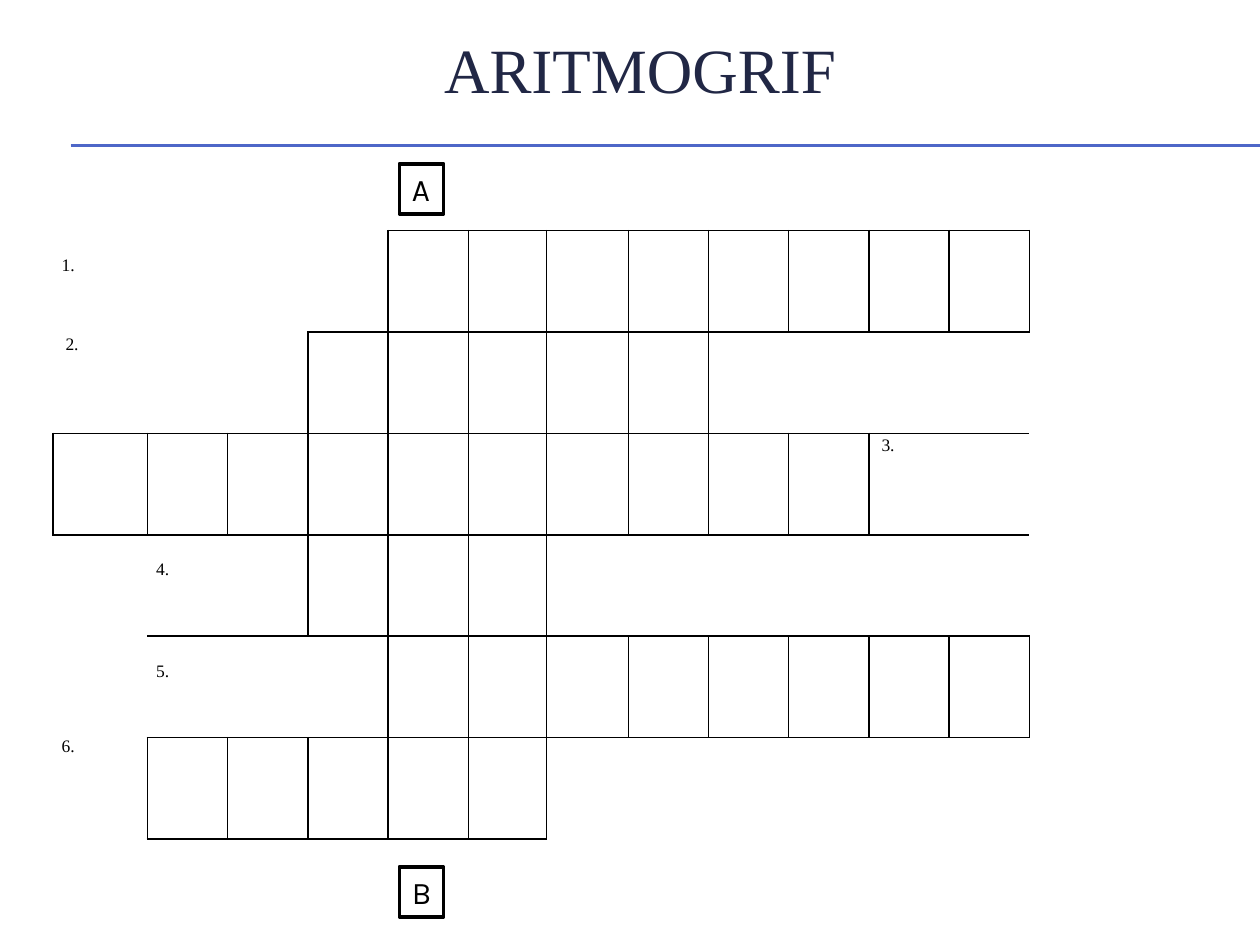
from lxml.etree import SubElement
from pptx import Presentation
from pptx.dml.color import RGBColor
from pptx.enum.shapes import MSO_CONNECTOR, MSO_SHAPE
from pptx.enum.text import MSO_ANCHOR, PP_ALIGN
from pptx.oxml.ns import qn
from pptx.util import Inches, Pt

BLACK = RGBColor(0x00, 0x00, 0x00)
WHITE = RGBColor(0xFF, 0xFF, 0xFF)
NAVY = RGBColor(0x21, 0x27, 0x45)
BLUE = RGBColor(0x4E, 0x67, 0xC8)
SERIF = "Times New Roman"
NO_STYLE_NO_GRID = "{2D5ABB26-0587-4C30-8999-92F81FD0307C}"

TITLE = "ARITMOGRIF"
# First and last column of the answer in each row
WORDS = [(4, 11), (3, 7), (0, 9), (3, 5), (4, 11), (1, 5)]
# Number, row, column, rows spanned, columns spanned, left and top margin
CLUES = [
    ("1.", 0, 0, 1, 4, 0.07, 0.18),
    ("2.", 1, 0, 1, 3, 0.10, 0),
    ("3.", 2, 10, 1, 2, 0.10, 0),
    ("4.", 3, 1, 1, 2, 0.07, 0.18),
    ("5.", 4, 1, 1, 3, 0.07, 0.18),
    ("6.", 3, 0, 3, 1, 0.07, 1.58),
]
# Row, column and columns spanned of the merged empty areas
BLANKS = [(1, 8, 4), (3, 6, 6), (5, 6, 6)]
OPEN_EDGES = {(3, 3, "a:lnB"), (4, 3, "a:lnT")}
EXTRA_EDGES = {(2, 10, "a:lnB"), (2, 11, "a:lnB")}
# Letters marking the ends of the solution column
MARKERS = [("A", 1.3), ("B", 6.88)]

ROW_COUNT, COLUMN_COUNT = len(WORDS), 12
GRID_LEFT, GRID_TOP, GRID_WIDTH, GRID_HEIGHT = 0.42, 1.83, 7.75, 4.83
ODD_WIDTHS = {0: 0.75, 5: 0.62, 6: 0.65}
SIDES = {"a:lnL": (0, -1), "a:lnR": (0, 1), "a:lnT": (-1, 0), "a:lnB": (1, 0)}


def style_run(paragraph, font_name, size, color):
    font = paragraph.runs[0].font
    font.name, font.size = font_name, Pt(size)
    font.color.rgb = color


def in_word(row, column):
    return 0 <= row < ROW_COUNT and WORDS[row][0] <= column <= WORDS[row][1]


def has_edge(row, column, side):
    edge = (row, column, side)
    down, right = SIDES[side]
    bordering = in_word(row, column) or in_word(row + down, column + right)
    return edge in EXTRA_EDGES or (bordering and edge not in OPEN_EDGES)


def draw_edge(cell, side):
    edge = SubElement(cell._tc.get_or_add_tcPr(), qn(side), w=str(Pt(1)))
    fill = SubElement(edge, qn("a:solidFill"))
    SubElement(fill, qn("a:srgbClr"), val=str(BLACK))


prs = Presentation()
prs.slide_width, prs.slide_height = Inches(10), Inches(7.5)
slide = prs.slides.add_slide(prs.slide_layouts[6])

# Double rule under the title
for y in (1.15, 1.16):
    rule = slide.shapes.add_connector(
        MSO_CONNECTOR.STRAIGHT, Inches(0.56), Inches(y), Inches(10), Inches(y))
    rule.line.color.rgb = BLUE
    rule.line.width = Pt(0.75)
    SubElement(rule._element.spPr, qn("a:effectLst"))

# Title
title = slide.shapes.add_textbox(
    Inches(0.33), Inches(0.17), Inches(9.5), Inches(0.75)).text_frame
title.word_wrap = True
title.vertical_anchor = MSO_ANCHOR.MIDDLE
title.text = TITLE
title.paragraphs[0].alignment = PP_ALIGN.CENTER
style_run(title.paragraphs[0], SERIF, 36, NAVY)

# Crossword grid
grid = slide.shapes.add_table(
    ROW_COUNT, COLUMN_COUNT, Inches(GRID_LEFT), Inches(GRID_TOP),
    Inches(GRID_WIDTH), Inches(GRID_HEIGHT)).table
grid.first_row = grid.horz_banding = False
grid._tbl.tblPr.find(qn("a:tableStyleId")).text = NO_STYLE_NO_GRID
regular_width = ((GRID_WIDTH - sum(ODD_WIDTHS.values()))
                 / (COLUMN_COUNT - len(ODD_WIDTHS)))
for index, column in enumerate(grid.columns):
    column.width = Inches(ODD_WIDTHS.get(index, regular_width))
for row in grid.rows:
    row.height = Inches(GRID_HEIGHT / ROW_COUNT)

for r in range(ROW_COUNT):
    for c in range(COLUMN_COUNT):
        square = grid.cell(r, c)
        for side in SIDES:
            if has_edge(r, c, side):
                draw_edge(square, side)
        square.fill.background()

for r, c, span in BLANKS:
    grid.cell(r, c).merge(grid.cell(r, c + span - 1))

# Clue numbers
for number, r, c, row_span, column_span, left, top in CLUES:
    clue = grid.cell(r, c)
    clue.merge(grid.cell(r + row_span - 1, c + column_span - 1))
    clue.margin_left, clue.margin_right = Inches(left), Inches(0.07)
    clue.margin_top, clue.margin_bottom = Inches(top), 0
    clue.text_frame.text = number
    paragraph = clue.text_frame.paragraphs[0]
    paragraph.alignment = PP_ALIGN.JUSTIFY
    paragraph.line_spacing = 1.15
    style_run(paragraph, SERIF, 10, BLACK)

# Solution column markers
for letter, top in MARKERS:
    marker = slide.shapes.add_shape(
        MSO_SHAPE.RECTANGLE, Inches(3.17), Inches(top), Inches(0.35), Inches(0.4))
    marker.shadow.inherit = False
    marker.fill.solid()
    marker.fill.fore_color.rgb = WHITE
    marker.line.color.rgb = BLACK
    marker.line.width = Pt(2)
    marker.text_frame.word_wrap = False
    marker.text_frame.vertical_anchor = MSO_ANCHOR.MIDDLE
    marker.text_frame.text = letter
    marker.text_frame.paragraphs[0].alignment = PP_ALIGN.LEFT
    style_run(marker.text_frame.paragraphs[0], "Karla", 18, BLACK)

prs.save("out.pptx")
